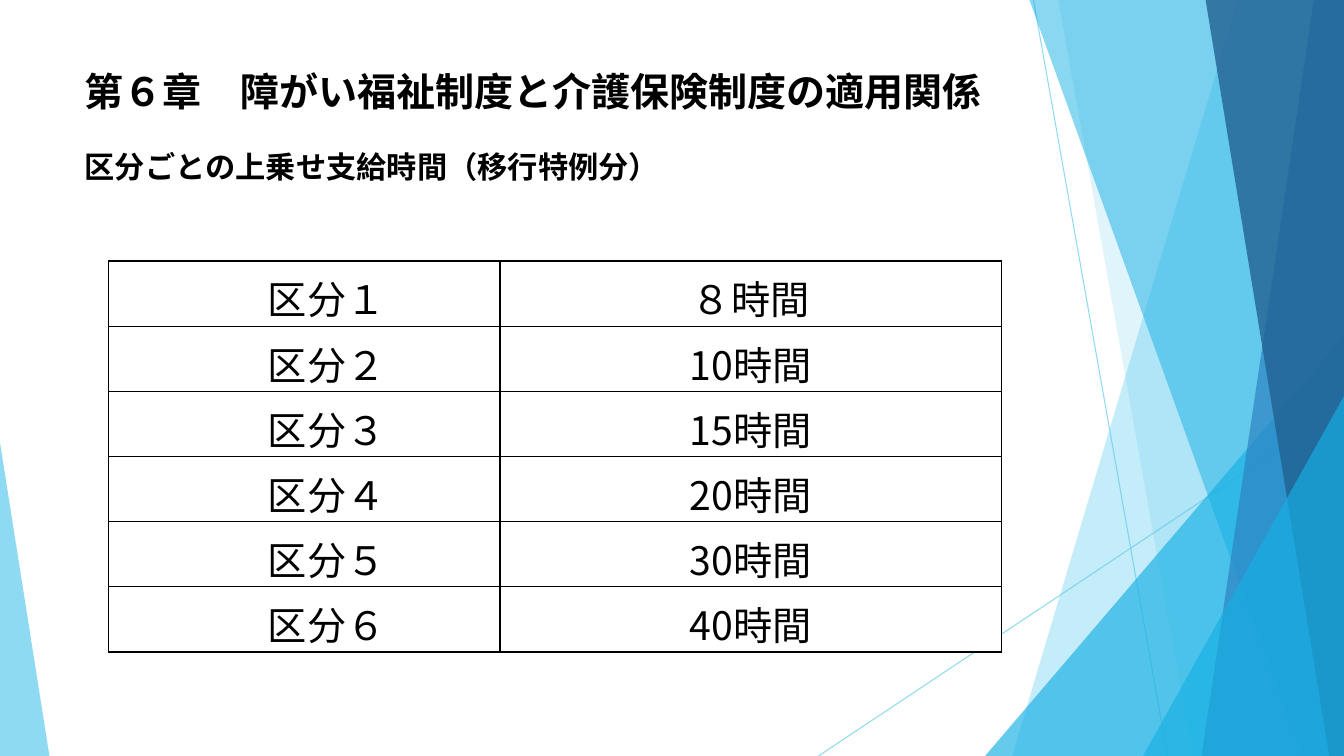
from lxml.etree import SubElement as Sub
from pptx import Presentation
from pptx.dml.color import RGBColor as Rgb
from pptx.enum.shapes import MSO_CONNECTOR as Conn, MSO_SHAPE as Kind
from pptx.enum.text import MSO_ANCHOR as Anchor, MSO_AUTO_SIZE as Auto, PP_ALIGN as Align
from pptx.oxml.ns import qn
from pptx.util import Inches, Pt

W, H = Inches(13.33), Inches(7.5)
HEX = {"sky": "5FCBEF", "cyan": "17B0E4", "blue": "2E83C3",
       "navy": "226292", "ink": "000000", "paper": "FFFFFF"}
SERIF, SANS, HEAD = "TeX Gyre Schola", "Noto Sans CJK JP", "Lato"
HOURS = ["８", "10", "15", "20", "30", "40"]
DIGITS = "１２３４５６"


def across(share):
    """Percent of the slide's width."""
    return round(W * share / 100)


def down(share):
    """Percent of the slide's height."""
    return round(H * share / 100)


def tint(color, alpha):
    """Set the opacity, in percent, of the colour element inside color."""
    Sub(color.find(".//" + qn("a:srgbClr")), qn("a:alpha"), val=str(alpha * 1000))


def paint(shape, hue, alpha):
    shape.shadow.inherit = False
    shape.fill.solid()
    shape.fill.fore_color.rgb = Rgb.from_string(HEX[hue])
    shape.line.fill.background()
    tint(shape.fill._xPr.find(qn("a:solidFill")), alpha)


def ray(slide, x1, y1, x2, y2):
    line = slide.shapes.add_connector(
        Conn.STRAIGHT, across(x1), down(y1), across(x2), down(y2))
    line.line.width = Pt(0.75)
    line.line.color.rgb = Rgb.from_string(HEX["sky"])
    props = line._element.spPr
    tint(props.find(qn("a:ln")), 70)
    Sub(props, qn("a:effectLst"))


def band(slide, top, base, hue, alpha):
    """Fill from a slanted left edge to the right side of the slide."""
    pen = slide.shapes.build_freeform(across(top), 0)
    pen.add_line_segments([(W, 0), (W, H), (across(base), H)], close=True)
    paint(pen.convert_to_shape(), hue, alpha)


def wedge(slide, left, top, width, tip, hue, alpha):
    """Draw a triangle that stands on the bottom edge; tip is 0 left, 1 right."""
    shape = slide.shapes.add_shape(
        Kind.ISOSCELES_TRIANGLE, across(left), down(top), across(width), H - down(top))
    shape.adjustments[0] = tip
    paint(shape, hue, alpha)


def write(para, text, size, font=SERIF, bold=False, align=Align.LEFT, space=1.0, gap=0):
    para.alignment, para.line_spacing, para.space_before = align, space, Pt(gap)
    run = para.add_run()
    run.text = text
    run.font.size, run.font.bold, run.font.name = Pt(size), bold, font
    run.font.color.rgb = Rgb.from_string(HEX["ink"])
    Sub(run._r.rPr, qn("a:ea"), typeface=SANS)


def frame(cell):
    props = cell._tc.get_or_add_tcPr()
    for at, side in enumerate(("lnL", "lnR", "lnT", "lnB")):
        edge = props.makeelement(qn("a:" + side), {"w": str(Pt(1))})
        Sub(Sub(edge, qn("a:solidFill")), qn("a:srgbClr"), val=HEX["ink"])
        props.insert(at, edge)


def fill(cell, parts, indent=False):
    """Write (text, font) parts into one centred, framed cell."""
    cell.margin_left = cell.margin_right = Inches(0.07)
    cell.margin_top = cell.margin_bottom = 0
    cell.fill.solid()
    cell.fill.fore_color.rgb = Rgb.from_string(HEX["paper"])
    frame(cell)
    para = cell.text_frame.paragraphs[0]
    for text, font in parts:
        write(para, text, 28, font=font, align=Align.CENTER, space=1.15)
    if indent:
        props = para._p.get_or_add_pPr()
        props.set("marL", str(Inches(0.59)))
        props.set("indent", str(Inches(-0.15)))


def decor(slide):
    ray(slide, 76.9, 0, 86.87, 100)
    ray(slide, 100, 53.73, 60.9, 100)
    band(slide, 92.1, 75.3, "sky", 36)
    band(slide, 78.75, 88.75, "sky", 20)
    wedge(slide, 73.3, 44.4, 26.7, 1, "cyan", 66)
    band(slide, 76.6, 96.85, "cyan", 50)
    band(slide, 97.75, 89.4, "blue", 70)
    band(slide, 89.7, 98.9, "navy", 80)
    wedge(slide, 85.05, 52.4, 14.95, 1, "cyan", 66)
    wedge(slide, 0, 58.53, 3.68, 0, "sky", 70)


def head(slide):
    title = slide.shapes.title
    title.left, title.top = across(5.55), down(8.93)
    title.width, title.height = across(70.5), down(19.2)
    body = title.text_frame
    body.word_wrap, body.auto_size = True, Auto.NONE
    body.vertical_anchor = Anchor.TOP
    write(body.paragraphs[0], "第６章\u3000障がい福祉制度と介護保険制度の適用関係".replace("\u3000", "　"),
          27.9, font=HEAD, bold=True, space=0.9)
    write(body.add_paragraph(), "区分ごとの上乗せ支給時間（移行特例分）",
          21.6, bold=True, space=0.9, gap=27)


def chart(slide):
    """Build the table of hours for each grade."""
    grid = slide.shapes.add_table(
        len(HOURS), 2, across(8.1), down(34.53), across(66.4), down(48)).table
    grid.first_row = grid.horz_banding = False
    for col, share in zip(grid.columns, (29.1, 37.3)):
        col.width = across(share)
    for row, (digit, hours) in enumerate(zip(DIGITS, HOURS)):
        grid.rows[row].height = down(8)
        fill(grid.cell(row, 0), [("区分" + digit, SERIF)], indent=True)
        font = SANS if hours.isascii() else SERIF
        fill(grid.cell(row, 1), [(hours, font), ("時間", SERIF)])


def main():
    deck = Presentation()
    deck.slide_width, deck.slide_height = W, H
    slide = deck.slides.add_slide(deck.slide_layouts[5])
    decor(slide)
    head(slide)
    chart(slide)
    deck.save("out.pptx")


if __name__ == "__main__":
    main()
